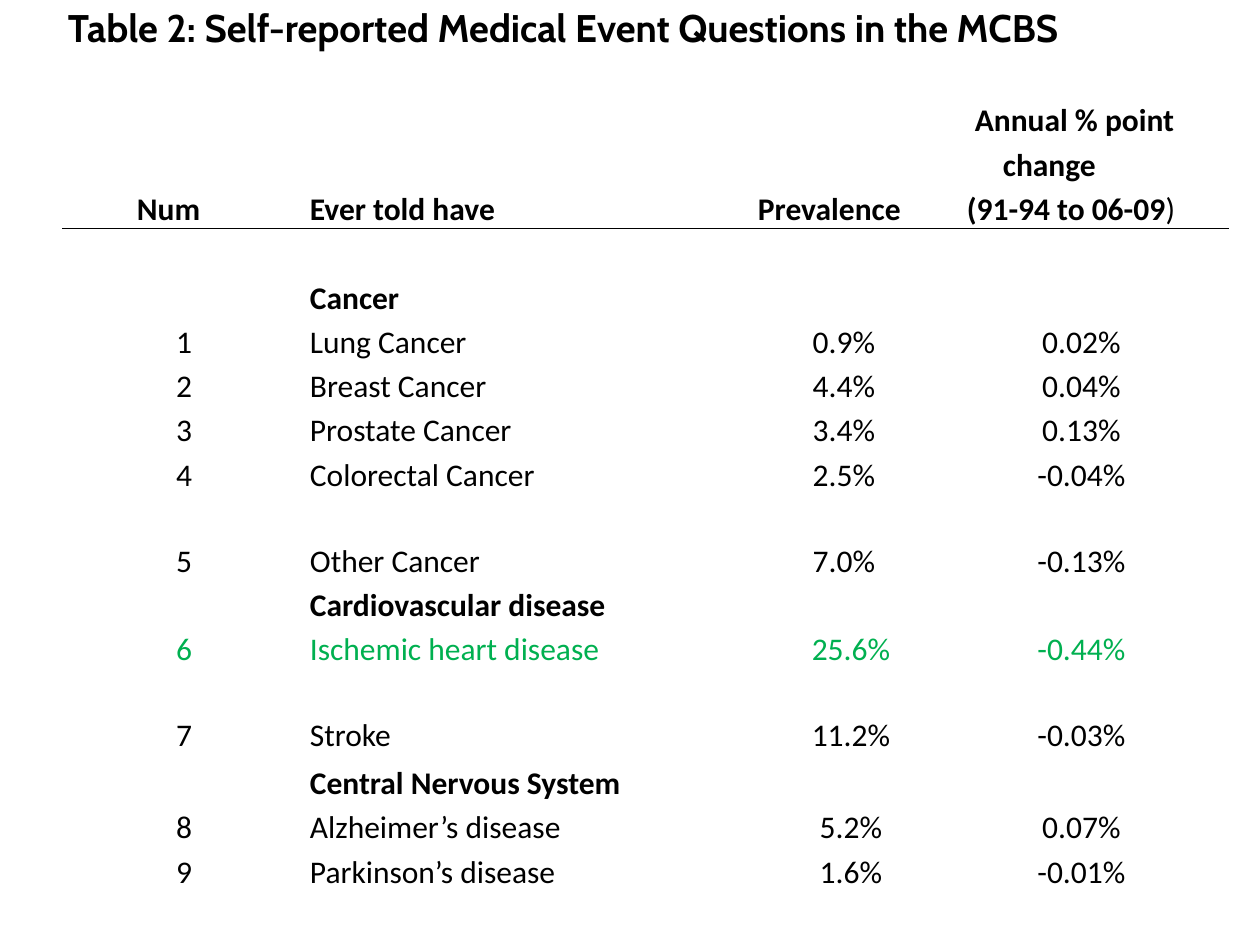
"""Build the slide listing self-reported medical event questions."""
from dataclasses import dataclass

from lxml import etree
from pptx import Presentation
from pptx.dml.color import RGBColor
from pptx.enum.text import MSO_ANCHOR, PP_ALIGN
from pptx.oxml.ns import qn
from pptx.util import Emu, Pt

TOP, BOTTOM = MSO_ANCHOR.TOP, MSO_ANCHOR.BOTTOM
LEFT, CENTER = PP_ALIGN.LEFT, PP_ALIGN.CENTER
EMU_PER_PX = 914400 / 126


@dataclass(frozen=True)
class Theme:
    """Hold the colours, fonts and sizes of the slide."""

    text: str = "000000"
    background: str = "FFFFFF"
    highlight: str = "00B050"
    title_font: str = "Cabin"
    body_font: str = "Calibri"
    title_size: int = 22
    body_size: int = 18
    line_spacing: float = 1.15
    rule_width: int = 1


THEME = Theme()
TITLE = "Table 2: Self-reported Medical Event Questions in the MCBS"
COLUMN_WIDTHS = (242, 448, 14, 168, 293)
ROW_HEIGHTS = (91, 125, 89, 43, 43, 43, 43, 86, 43, 42, 86, 48, 42, 43, 47)
HEADER_ROW = 1
HEADERS = {
    0: [("Num", 69)],
    1: [("Ever told have", 0)],
    2: [("Prevalence", 0)],
    4: [("Annual % point", 35), ("change", 63), ("(91-94 to 06-09", 27)],
}
GROUPS = [
    ("Cancer", 2, [
        ("1", "Lung Cancer", "0.9%", "0.02%"),
        ("2", "Breast Cancer", "4.4%", "0.04%"),
        ("3", "Prostate Cancer", "3.4%", "0.13%"),
        ("4", "Colorectal Cancer", "2.5%", "-0.04%"),
        ("5", "Other Cancer", "7.0%", "-0.13%"),
    ]),
    ("Cardiovascular disease", 3, [
        ("6", "Ischemic heart disease", "25.6%", "-0.44%"),
        ("7", "Stroke", "11.2%", "-0.03%"),
    ]),
    ("Central Nervous System", 3, [
        ("8", "Alzheimer’s disease", "5.2%", "0.07%"),
        ("9", "Parkinson’s disease", "1.6%", "-0.01%"),
    ]),
]
HIGHLIGHTED = "Ischemic heart disease"


def px(value):
    """Turn pixels into EMU."""
    return Emu(round(value * EMU_PER_PX))


def apply_format(target, values):
    """Set each named attribute on the target."""
    for name, value in values.items():
        setattr(target, name, value)


def add_run(paragraph, text, color=THEME.text, **font_values):
    """Append a formatted run to a paragraph."""
    run = paragraph.add_run()
    run.text = text
    defaults = {"name": THEME.body_font, "size": Pt(THEME.body_size), "bold": False}
    apply_format(run.font, {**defaults, **font_values})
    run.font.color.rgb = RGBColor.from_string(color)


def write_cell(cell, text, alignment=LEFT, **run_values):
    """Write one line of body text into a cell."""
    paragraph = cell.text_frame.paragraphs[0]
    apply_format(paragraph, {"alignment": alignment, "line_spacing": THEME.line_spacing})
    add_run(paragraph, text, **run_values)


def write_header(cell, lines):
    """Write indented bold lines into a header cell."""
    for index, (text, indent) in enumerate(lines):
        frame = cell.text_frame
        paragraph = frame.add_paragraph() if index else frame.paragraphs[0]
        paragraph.line_spacing = THEME.line_spacing
        properties = paragraph._p.get_or_add_pPr()
        properties.set("marL", str(px(indent)))
        properties.set("indent", "0")
        add_run(paragraph, text, bold=True)
        if text.startswith("("):
            add_run(paragraph, ")")


def add_border(cell, side):
    """Draw a rule on one side of a cell."""
    line = etree.Element(qn(f"a:ln{side}"), w=str(Pt(THEME.rule_width)))
    fill = etree.SubElement(line, qn("a:solidFill"))
    etree.SubElement(fill, qn("a:srgbClr"), val=THEME.text)
    cell._tc.get_or_add_tcPr().insert(0, line)


def add_table(slide):
    """Add the empty table with its sizes, fills and rules."""
    frame = slide.shapes.add_table(
        len(ROW_HEIGHTS), len(COLUMN_WIDTHS), px(63), px(5),
        px(sum(COLUMN_WIDTHS)), px(sum(ROW_HEIGHTS)))
    table = frame.table
    apply_format(table, {"first_row": False, "horz_banding": False})
    for column, width in zip(table.columns, COLUMN_WIDTHS):
        column.width = px(width)
    for row, height in zip(table.rows, ROW_HEIGHTS):
        row.height = px(height)
    margins = {"margin_left": px(5), "margin_right": px(5), "margin_top": 0, "margin_bottom": 0}
    for cell in table.iter_cells():
        apply_format(cell, {**margins, "vertical_anchor": BOTTOM})
        cell.fill.solid()
        cell.fill.fore_color.rgb = RGBColor.from_string(THEME.background)
    for column in range(len(COLUMN_WIDTHS)):
        add_border(table.cell(HEADER_ROW, column), "B")
        add_border(table.cell(HEADER_ROW + 1, column), "T")
    return table


def merge(table, row, first, last):
    """Merge neighbouring cells of one row."""
    table.cell(row, first).merge(table.cell(row, last))


def fill_headings(table):
    """Write the title and the column headings."""
    last = len(COLUMN_WIDTHS) - 1
    for row in (0, len(ROW_HEIGHTS) - 1):
        merge(table, row, 0, last)
    title = table.cell(0, 0)
    title.vertical_anchor = TOP
    add_run(title.text_frame.paragraphs[0], TITLE, name=THEME.title_font,
            size=Pt(THEME.title_size), bold=True)
    merge(table, HEADER_ROW, 2, 3)
    for column, lines in HEADERS.items():
        write_header(table.cell(HEADER_ROW, column), lines)


def fill_groups(table):
    """Write each disease group with its questions."""
    row = HEADER_ROW + 1
    for heading, value_column, questions in GROUPS:
        first = value_column - 1 if value_column == 3 else value_column
        span = (1, first) if value_column == 3 else (2, 3)
        merge(table, row, *span)
        write_cell(table.cell(row, 1), heading, bold=True)
        for row, question in enumerate(questions, row + 1):
            merge(table, row, *span)
            color = THEME.highlight if question[1] == HIGHLIGHTED else THEME.text
            for column, text in zip((0, 1, value_column, 4), question):
                alignment = LEFT if column == 1 else CENTER
                write_cell(table.cell(row, column), text, alignment, color=color)
        row += 1


def main():
    """Build and save the presentation."""
    presentation = Presentation()
    apply_format(presentation, {"slide_width": px(1260), "slide_height": px(945)})
    slide = presentation.slides.add_slide(presentation.slide_layouts[6])
    table = add_table(slide)
    fill_headings(table)
    fill_groups(table)
    presentation.save("out.pptx")


if __name__ == "__main__":
    main()
